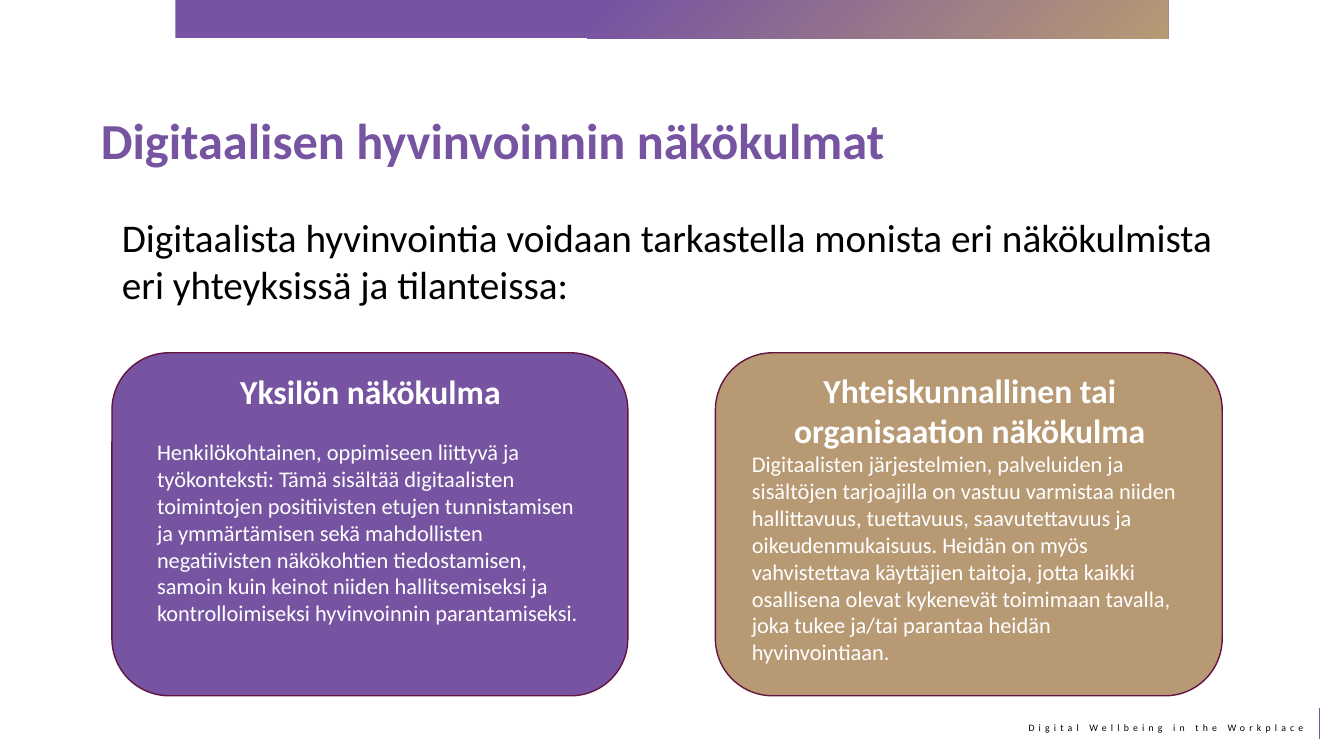
from lxml import etree
from pptx import Presentation
from pptx.dml.color import RGBColor
from pptx.enum.shapes import MSO_CONNECTOR, MSO_SHAPE
from pptx.enum.text import MSO_ANCHOR, PP_ALIGN
from pptx.oxml.ns import qn
from pptx.util import Pt

LEFT, CENTER, RIGHT = PP_ALIGN.LEFT, PP_ALIGN.CENTER, PP_ALIGN.RIGHT
TOP = MSO_ANCHOR.TOP
RECTANGLE, ROUNDED = MSO_SHAPE.RECTANGLE, MSO_SHAPE.ROUNDED_RECTANGLE
STRAIGHT = MSO_CONNECTOR.STRAIGHT

# Content
FONT = "Calibri"
COLORS = {"purple": "7654A2", "tan": "B79974", "outline": "631440",
          "black": "000000", "white": "FFFFFF"}
TITLE = "Digitaalisen hyvinvoinnin näkökulmat"
INTRO = ("Digitaalista hyvinvointia voidaan tarkastella monista eri näkökulmista "
         "eri yhteyksissä ja tilanteissa:")
FOOTER = "Digital Wellbeing in the Workplace"
CARDS = [
    {"heading": "Yksilön näkökulma",
     "body": "Henkilökohtainen, oppimiseen liittyvä ja työkonteksti: Tämä sisältää "
             "digitaalisten toimintojen positiivisten etujen tunnistamisen ja "
             "ymmärtämisen sekä mahdollisten negatiivisten näkökohtien tiedostamisen, "
             "samoin kuin keinot niiden hallitsemiseksi ja kontrolloimiseksi "
             "hyvinvoinnin parantamiseksi.",
     "fill": "purple", "left": 80, "width": 368.5, "gap": 19.5,
     "text_area": (105.1, 261.2, 319, 191.5)},
    {"heading": "Yhteiskunnallinen tai organisaation näkökulma",
     "body": "Digitaalisten järjestelmien, palveluiden ja sisältöjen tarjoajilla on "
             "vastuu varmistaa niiden hallittavuus, tuettavuus, saavutettavuus ja "
             "oikeudenmukaisuus. Heidän on myös vahvistettava käyttäjien taitoja, "
             "jotta kaikki osallisena olevat kykenevät toimimaan tavalla, joka tukee "
             "ja/tai parantaa heidän hyvinvointiaan.",
     "fill": "tan", "left": 511, "width": 362, "gap": 0,
     "text_area": (530, 260.6, 325.4, 220.3)},
]
CARD_TOP, CARD_HEIGHT = 252, 245


def color(name):
    return RGBColor.from_string(COLORS[name])


def points(*lengths):
    return [Pt(length) for length in lengths]


def write(para, text, size=16, ink="white", bold=False, align=LEFT, before=0, tracking=0):
    para.alignment = align
    para.line_spacing = 1.0
    para.space_before = Pt(before)
    span = para.add_run()
    span.text = text
    span.font.name = FONT
    span.font.size = Pt(size)
    span.font.bold = bold
    span.font.color.rgb = color(ink)
    if tracking:
        span.font._element.set("spc", str(tracking * 100))


def add_text_box(slide, area):
    frame = slide.shapes.add_textbox(*points(*area)).text_frame
    frame.word_wrap = True
    return frame


def add_band(slide):
    band = slide.shapes.add_shape(RECTANGLE, *points(125.3, 0, 709.2, 27.5))
    band.shadow.inherit = False
    band.line.fill.background()
    band.fill.gradient()
    for stop, (name, position) in zip(band.fill.gradient_stops, [("tan", 0), ("purple", 0.58)]):
        stop.color.rgb = color(name)
        stop.position = position
    # Radial gradient centred on the bottom right corner
    gradient = band._element.spPr.find(qn("a:gradFill"))
    gradient.remove(gradient.find(qn("a:lin")))
    radial = etree.SubElement(gradient, qn("a:path"), path="circle")
    etree.SubElement(radial, qn("a:fillToRect"), l="100000", t="100000")


def add_footer(slide):
    frame = add_text_box(slide, (697, 511.9, 241.2, 15.8))
    write(frame.paragraphs[0], FOOTER, size=7, ink="black", align=RIGHT, tracking=3)
    rule = slide.shapes.add_connector(STRAIGHT, *points(942.5, 527.8, 942.5, 505.4))
    rule.line.color.rgb = color("purple")
    rule.line.width = Pt(0.75)
    etree.SubElement(rule._element.spPr, qn("a:effectLst"))


def add_title(slide):
    title = slide.shapes.title
    title.left, title.top, title.width, title.height = points(67, 72.7, 825, 63.4)
    frame = title.text_frame
    frame.vertical_anchor = TOP
    frame.margin_left, frame.margin_top = points(5, 5.5)
    write(frame.paragraphs[0], TITLE, size=36, ink="purple", bold=True)


def add_card(slide, card):
    panel = slide.shapes.add_shape(
        ROUNDED, *points(card["left"], CARD_TOP, card["width"], CARD_HEIGHT))
    panel.shadow.inherit = False
    panel.fill.solid()
    panel.fill.fore_color.rgb = color(card["fill"])
    panel.line.color.rgb = color("outline")
    panel.line.width = Pt(1)
    frame = add_text_box(slide, card["text_area"])
    write(frame.paragraphs[0], card["heading"], size=24, bold=True, align=CENTER)
    write(frame.add_paragraph(), card["body"], before=card["gap"])


def main():
    deck = Presentation()
    deck.slide_width, deck.slide_height = points(960, 540)
    slide = deck.slides.add_slide(deck.slide_layouts[5])

    # Frame of the page
    add_footer(slide)
    add_band(slide)

    # Title, introduction and the two viewpoints
    add_title(slide)
    intro = add_text_box(slide, (80, 149, 807, 75))
    write(intro.paragraphs[0], INTRO, size=28, ink="black")
    for card in CARDS:
        add_card(slide, card)

    deck.save("out.pptx")


if __name__ == "__main__":
    main()
